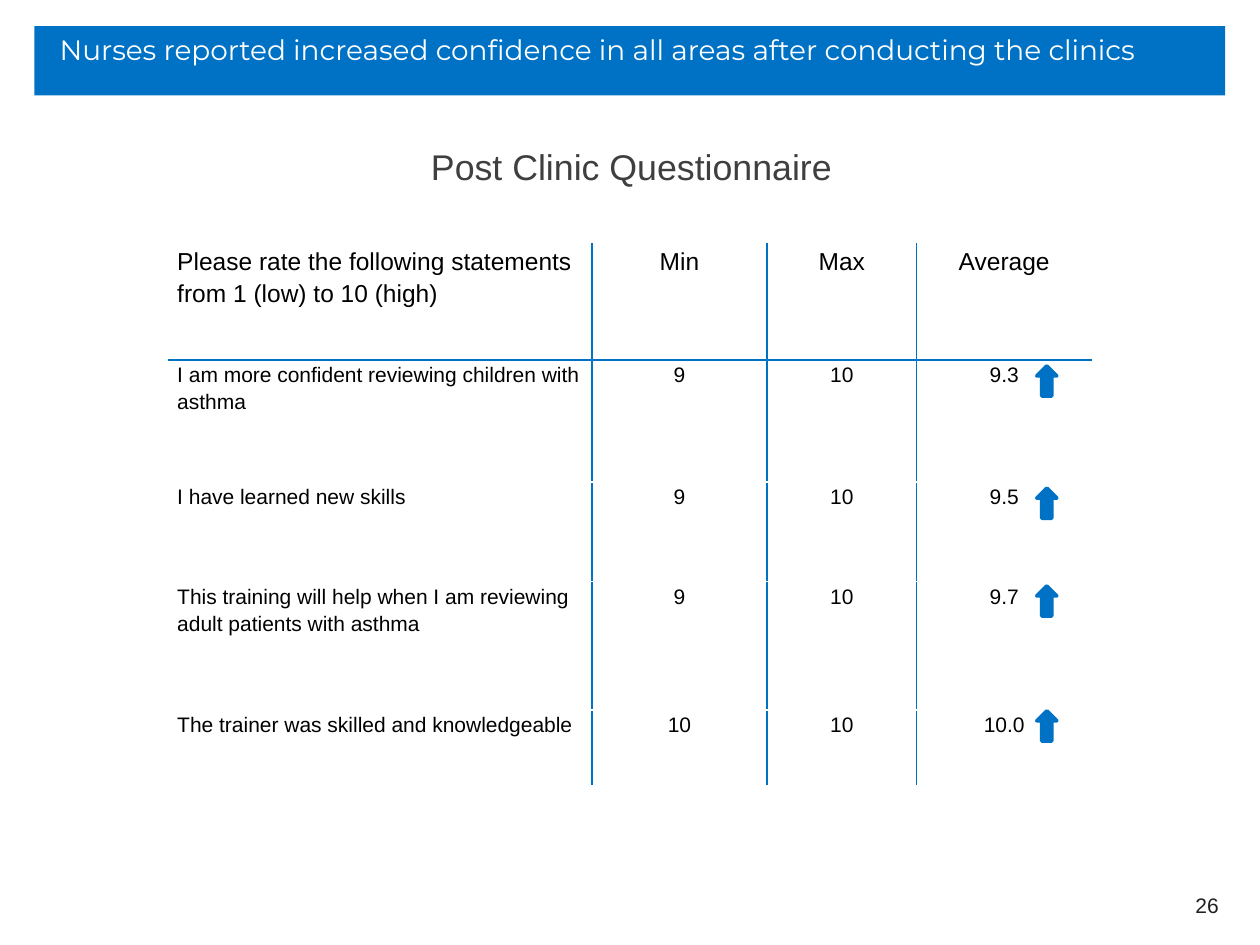
from lxml import etree
from pptx import Presentation
from pptx.dml.color import RGBColor
from pptx.enum.shapes import MSO_SHAPE
from pptx.enum.text import MSO_ANCHOR, MSO_AUTO_SIZE, PP_ALIGN
from pptx.oxml.ns import qn
from pptx.util import Pt

BLUE = RGBColor(0x00, 0x72, 0xC6)
WHITE = RGBColor(0xFF, 0xFF, 0xFF)
BLACK = RGBColor(0x00, 0x00, 0x00)
GRAY = RGBColor(0x3F, 0x3F, 0x3F)
DARK = RGBColor(0x20, 0x20, 0x20)
LEFT, CENTER, RIGHT = PP_ALIGN.LEFT, PP_ALIGN.CENTER, PP_ALIGN.RIGHT
TOP, MIDDLE = MSO_ANCHOR.TOP, MSO_ANCHOR.MIDDLE
NO_FIT = MSO_AUTO_SIZE.NONE
ARROW = MSO_SHAPE.RIGHT_ARROW

COLS = [242, 100, 85.6, 100]
ROWS = [66.2, 69.8, 56.9, 73.4, 43.2]
CELLS = [
    ["Please rate the following statements from 1 (low) to 10 (high)", "Min", "Max", "Average"],
    ["I am more confident reviewing children with asthma", "9", "10", "9.3"],
    ["I have learned new skills", "9", "10", "9.5"],
    ["This training will help when I am reviewing adult patients with asthma", "9", "10", "9.7"],
    ["The trainer was skilled and knowledgeable", "10", "10", "10.0"],
]
DROPS = [12, 12, 11, 9]  # arrow centre below the top of its row


def style(par, size, color, font="Arial", align=LEFT):
    par.alignment = align
    for run in par.runs:
        run.font.size = Pt(size)
        run.font.name = font
        run.font.color.rgb = color


def place(shape, box):
    shape.left, shape.top, shape.width, shape.height = map(Pt, box)


def indent(par, left):
    props = par._p.get_or_add_pPr()
    props.set("marL", str(Pt(left)))
    props.set("indent", "0")


def add_title(slide, box, text):
    title = slide.shapes.title
    place(title, box)
    title.fill.solid()
    title.fill.fore_color.rgb = BLUE
    frame = title.text_frame
    frame.text = text
    frame.vertical_anchor = TOP
    frame.auto_size = NO_FIT
    par = frame.paragraphs[0]
    style(par, 16, WHITE, "Montserrat")
    indent(par, 7.2)
    par.space_before = Pt(6)


def add_text(slide, box, text):
    frame = slide.shapes.add_textbox(*map(Pt, box)).text_frame
    frame.word_wrap = True
    frame.text = text
    return frame


def add_heading(slide, box, text):
    frame = add_text(slide, box, text)
    frame.margin_left = frame.margin_right = 0
    frame.margin_top = frame.margin_bottom = 0
    par = frame.paragraphs[0]
    style(par, 20.4, GRAY)
    indent(par, 13.7)
    par.space_before = par.space_after = Pt(6)


def add_number(slide, box, text):
    frame = add_text(slide, box, text)
    frame.vertical_anchor = MIDDLE
    style(frame.paragraphs[0], 12, DARK, align=RIGHT)


def set_edges(cell, colors):
    """Draw the left, right, top and bottom borders in the given colours."""
    props = cell._tc.get_or_add_tcPr()
    for side, color in zip("LRTB", colors):
        line = etree.SubElement(props, qn(f"a:ln{side}"), w=str(Pt(1)))
        fill = etree.SubElement(line, qn("a:solidFill"))
        etree.SubElement(fill, qn("a:srgbClr"), val=str(color))


def fill_cell(cell, text, row, col):
    cell.text = text
    cell.margin_left = cell.margin_right = Pt(5)
    cell.margin_top = cell.margin_bottom = 0
    par = cell.text_frame.paragraphs[0]
    style(par, 12 if row else 14, BLACK, align=CENTER if col else LEFT)
    par.line_spacing = 1.15
    blue = (col > 0, col < len(COLS) - 1, row == 1, row == 0)
    set_edges(cell, [BLUE if on else WHITE for on in blue])
    cell.fill.solid()
    cell.fill.fore_color.rgb = WHITE


def add_ratings(slide, left, top):
    frame = slide.shapes.add_table(
        len(ROWS), len(COLS), Pt(left), Pt(top), Pt(sum(COLS)), Pt(sum(ROWS)))
    table = frame.table
    table.first_row = table.horz_banding = False
    for col, width in zip(table.columns, COLS):
        col.width = Pt(width)
    for row, height in zip(table.rows, ROWS):
        row.height = Pt(height)
    for r, texts in enumerate(CELLS):
        for c, text in enumerate(texts):
            fill_cell(table.cell(r, c), text, r, c)


def add_arrows(slide, mid, top):
    """Put an upward arrow, centred on mid, in each row below the header."""
    wide, high = 17.3, 11.5
    for i, drop in enumerate(DROPS, 1):
        y = top + sum(ROWS[:i]) + drop
        arrow = slide.shapes.add_shape(
            ARROW, Pt(mid - wide / 2), Pt(y - high / 2), Pt(wide), Pt(high))
        arrow.rotation = 270
        arrow.shadow.inherit = False
        arrow.fill.solid()
        arrow.fill.fore_color.rgb = BLUE
        arrow.line.color.rgb = BLUE
        arrow.line.width = Pt(2)


def main():
    deck = Presentation()
    deck.slide_width, deck.slide_height = Pt(720), Pt(540)
    slide = deck.slides.add_slide(deck.slide_layouts[5])
    add_title(slide, (19.7, 15, 680.4, 39.6),
              "Nurses reported increased confidence in all areas after conducting the clinics")
    add_number(slide, (535.7, 502.6, 167.8, 28.8), "26")
    add_ratings(slide, 96.3, 139.5)
    add_heading(slide, (232.6, 82.8, 254.9, 33.8), "Post Clinic Questionnaire")
    add_arrows(slide, 598.2, 139.5)
    deck.save("out.pptx")


if __name__ == "__main__":
    main()
